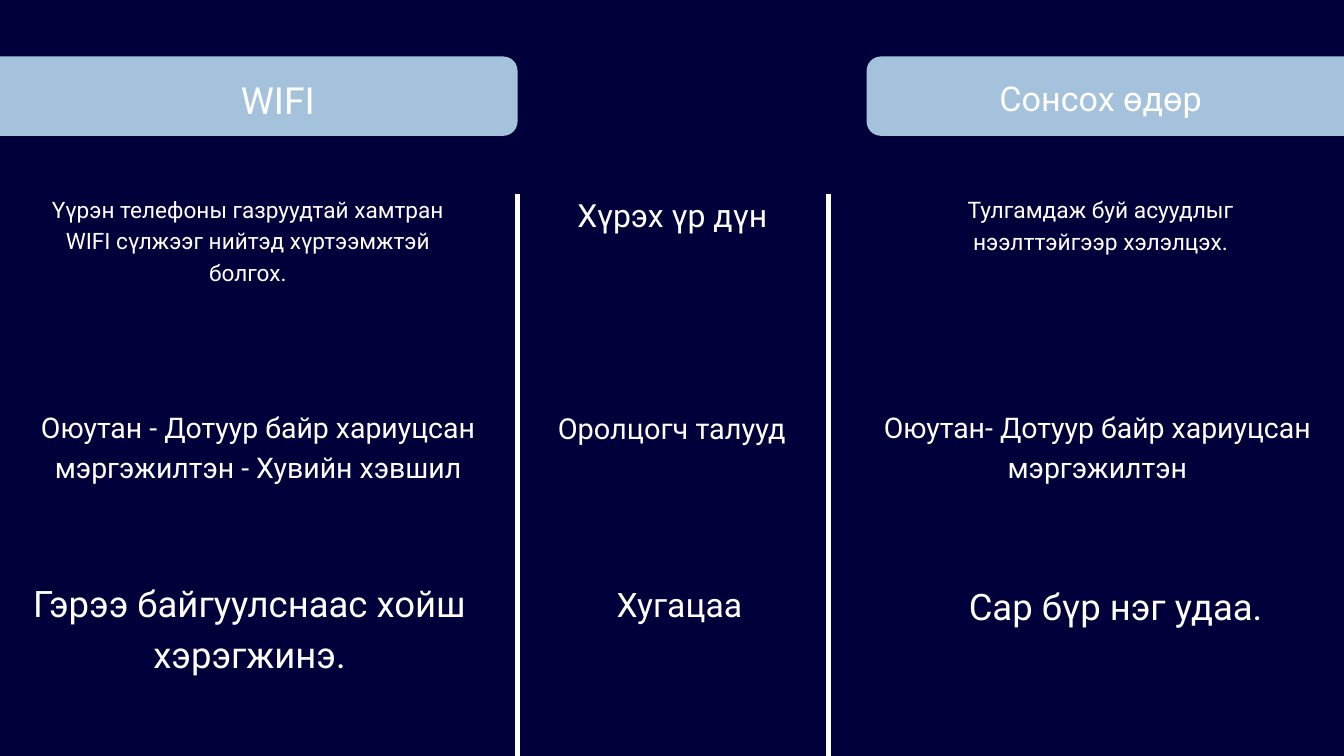
"""Build a slide comparing two initiatives by outcome, participants and timing."""
from typing import NamedTuple

from lxml.etree import SubElement
from pptx import Presentation
from pptx.dml.color import RGBColor
from pptx.enum.shapes import MSO_CONNECTOR, MSO_SHAPE
from pptx.enum.text import MSO_ANCHOR, MSO_AUTO_SIZE, PP_ALIGN
from pptx.oxml.ns import qn
from pptx.slide import Slide
from pptx.util import Pt

COLOURS = {"background": "01003B", "header": "A4C2DB", "white": "FFFFFF"}
HEADER_TOP, HEADER_WIDTH, HEADER_HEIGHT = 60.5, 605.5, 85
DIVIDER_TOP, DIVIDER_BOTTOM = 207.4, 1017.4
OUTCOME_TOP, PARTICIPANTS_TOP = 204.5, 433.4
FRAME_FORMAT = {
    "margin_left": 0,
    "margin_top": 0,
    "margin_right": 0,
    "margin_bottom": 0,
    "word_wrap": True,
    "auto_size": MSO_AUTO_SIZE.SHAPE_TO_FIT_TEXT,
    "vertical_anchor": MSO_ANCHOR.TOP,
}


class Label(NamedTuple):
    """A centred text with its place, font size and line spacing in points."""

    text: str
    left: float
    top: float
    width: float
    height: float
    size: float
    spacing: float


HEADER_LEFTS = (-51, 928.5)
DIVIDER_LEFTS = (554.4, 887.8)
LABELS = (
    Label("WIFI", 254.2, 74.2, 87.1, 54.7, 40, 56.1),
    Label("Сонсох өдөр", 1062, 75.6, 234.7, 49, 36.6, 51.3),
    Label("Үүрэн телефоны газруудтай хамтран WIFI сүлжээг нийтэд хүртээмжтэй болгох.",
          30.2, OUTCOME_TOP, 470.9, 99.4, 24.2, 34),
    Label("Хүрэх үр дүн", 608.4, 203, 223.9, 45.4, 34.2, 47.8),
    Label("Тулгамдаж буй асуудлыг нээлттэйгээр хэлэлцэх.",
          957.6, OUTCOME_TOP, 442.8, 65.5, 24.4, 34.2),
    Label("Оюутан - Дотуур байр хариуцсан мэргэжилтэн - Хувийн хэвшил",
          0, PARTICIPANTS_TOP, 553, 83.5, 30.5, 42.6),
    Label("Оролцогч талууд", 554.4, PARTICIPANTS_TOP, 330.5, 41.8, 31, 43.4),
    Label("Оюутан- Дотуур байр хариуцсан мэргэжилтэн",
          911.5, PARTICIPANTS_TOP, 528.5, 83.5, 30.5, 42.6),
    Label("Гэрээ байгуулснаас хойш хэрэгжинэ.", 0, 614.2, 535, 107.3, 39.1, 54.7),
    Label("Хугацаа", 608.4, 618.5, 239, 49, 36.1, 50.6),
    Label("Сар бүр нэг удаа.", 1023.8, 617.8, 343.4, 52.6, 39.1, 54.7),
)


def colour(name: str) -> RGBColor:
    """Return the named colour."""
    return RGBColor.from_string(COLOURS[name])


def apply_format(target: object, values: dict) -> None:
    """Set every attribute given in values on the target."""
    for name, value in values.items():
        setattr(target, name, value)


def draw_header(page: Slide, left: float) -> None:
    """Draw a rounded header bar that runs off the side of the page."""
    bar = page.shapes.add_shape(
        MSO_SHAPE.ROUNDED_RECTANGLE, Pt(left), Pt(HEADER_TOP), Pt(HEADER_WIDTH), Pt(HEADER_HEIGHT)
    )
    bar.adjustments[0] = 0.18
    bar.shadow.inherit = False
    bar.fill.solid()
    bar.fill.fore_color.rgb = colour("header")
    bar.line.fill.background()


def draw_divider(page: Slide, left: float) -> None:
    """Draw a vertical line between two columns."""
    divider = page.shapes.add_connector(
        MSO_CONNECTOR.STRAIGHT, Pt(left), Pt(DIVIDER_TOP), Pt(left), Pt(DIVIDER_BOTTOM)
    )
    divider.line.color.rgb = colour("white")
    divider.line.width = Pt(5.25)
    SubElement(divider._element.spPr, qn("a:effectLst"))


def draw_label(page: Slide, label: Label) -> None:
    """Draw one centred text."""
    box = page.shapes.add_textbox(
        Pt(label.left), Pt(label.top), Pt(label.width), Pt(label.height)
    )
    apply_format(box.text_frame, FRAME_FORMAT)
    para = box.text_frame.paragraphs[0]
    apply_format(para, {"alignment": PP_ALIGN.CENTER, "line_spacing": Pt(label.spacing)})
    span = para.add_run()
    span.text = label.text
    apply_format(span.font, {"name": "Roboto", "size": Pt(label.size)})
    span.font.color.rgb = colour("white")


def main() -> None:
    """Build and save the deck."""
    deck = Presentation()
    apply_format(deck, {"slide_width": Pt(1440), "slide_height": Pt(810)})
    page = deck.slides.add_slide(deck.slide_layouts[6])
    page.background.fill.solid()
    page.background.fill.fore_color.rgb = colour("background")
    for left in HEADER_LEFTS:
        draw_header(page, left)
    for left in DIVIDER_LEFTS:
        draw_divider(page, left)
    for label in LABELS:
        draw_label(page, label)
    deck.save("out.pptx")


if __name__ == "__main__":
    main()
